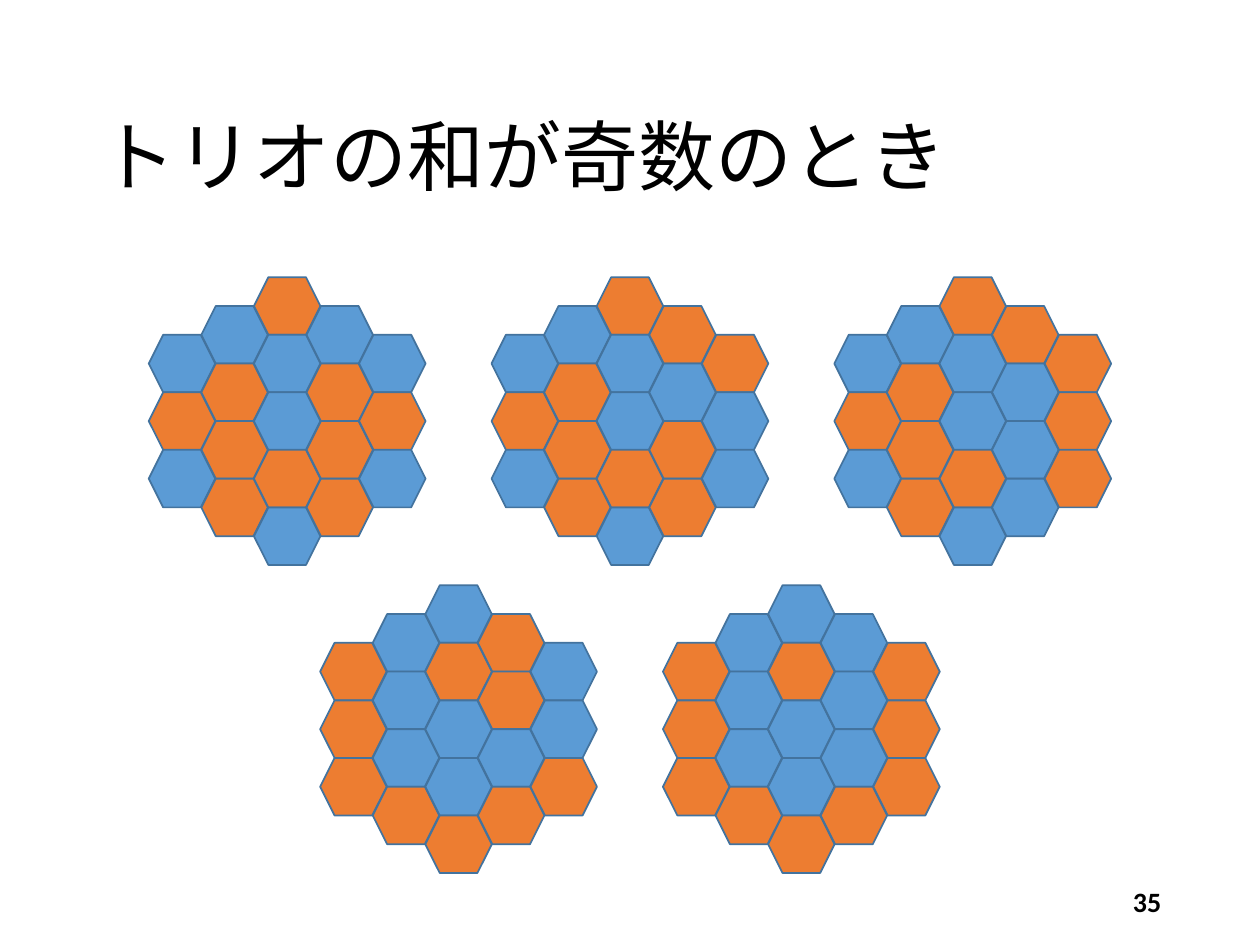
from pptx import Presentation
from pptx.dml.color import RGBColor
from pptx.enum import shapes, text
from pptx.util import Cm, Pt

COLOURS = {"O": "ED7D31", "B": "5B9BD5"}
OUTLINE = "43739E"

HEX_WIDTH, HEX_HEIGHT = 1.34, 1.16
COLUMN_STEP = 1.06
BOARD_STEP = 6.91
BOARD_LEFT = 3.0

# Each board is five columns from left to right, each read from top to bottom.
BOARD_ROWS = [
    (BOARD_LEFT, 5.59, ["BOB BOOO OBBOB BOOO BOB",
                        "BOB BOOO OBBOB OBOO OBB",
                        "BOB BOOO OBBOB OBBB OOO"]),
    (BOARD_LEFT + BOARD_STEP / 2, 11.8, ["OOO BBBO BOBBO OOBO BBO",
                                         "OOO BBBO BOBBO BBBO OOO"]),
]


def colour(value):
    return RGBColor.from_string(value)


def write(holder, words, size, bold=False, align=text.PP_ALIGN.LEFT, spacing=1.0):
    frame = holder.text_frame
    frame.word_wrap = True
    frame.vertical_anchor = text.MSO_ANCHOR.MIDDLE
    paragraph = frame.paragraphs[0]
    paragraph.alignment = align
    paragraph.line_spacing = spacing
    run = paragraph.add_run()
    run.text = words
    run.font.name = "Calibri"
    run.font.size = Pt(size)
    run.font.bold = bold
    run.font.color.rgb = colour("000000")


deck = Presentation()
deck.slide_width, deck.slide_height = Cm(25.4), Cm(19.05)
slide = deck.slides.add_slide(deck.slide_layouts[5])

heading = slide.shapes.title
heading.left, heading.top = Cm(1.75), Cm(1.85)
heading.width, heading.height = Cm(21.9), Cm(2.77)
write(heading, "トリオの和が奇数のとき", size=44, spacing=0.9)

for row_left, row_top, boards in BOARD_ROWS:
    for board_index, board in enumerate(boards):
        cells = slide.shapes.add_group_shape().shapes
        for column, letters in enumerate(board.split()):
            left = row_left + board_index * BOARD_STEP + column * COLUMN_STEP
            # Shorter columns are centred against the five-cell middle column.
            column_top = row_top + (5 - len(letters)) * HEX_HEIGHT / 2
            for row, letter in enumerate(letters):
                cell = cells.add_shape(
                    shapes.MSO_SHAPE.HEXAGON,
                    Cm(left), Cm(column_top + row * HEX_HEIGHT),
                    Cm(HEX_WIDTH), Cm(HEX_HEIGHT))
                cell.shadow.inherit = False
                cell.fill.solid()
                cell.fill.fore_color.rgb = colour(COLOURS[letter])
                cell.line.color.rgb = colour(OUTLINE)
                cell.line.width = Pt(1)

page_number = slide.shapes.add_textbox(Cm(17.94), Cm(17.66), Cm(5.72), Cm(1.01))
write(page_number, "35", size=16, bold=True, align=text.PP_ALIGN.RIGHT)

deck.save("out.pptx")
